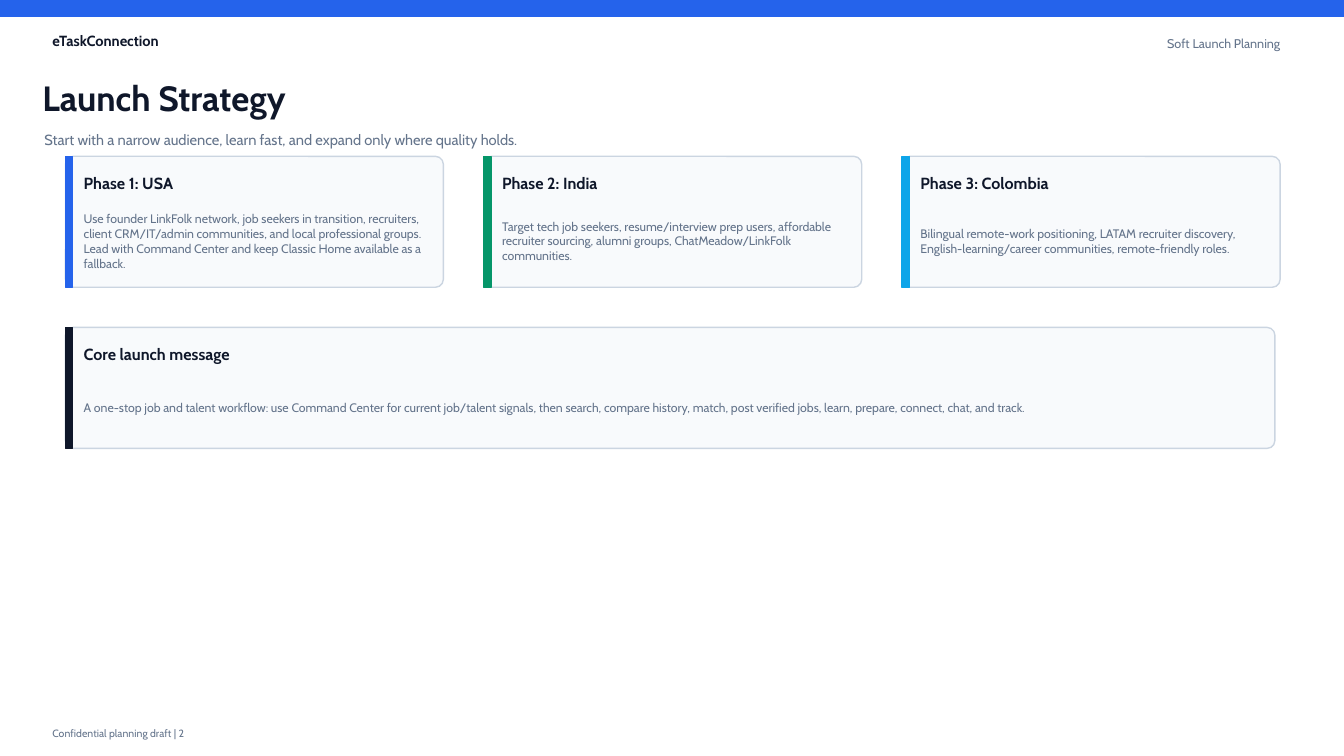
from pptx import Presentation
from pptx.dml.color import RGBColor
from pptx.enum.shapes import MSO_SHAPE
from pptx.enum.text import MSO_ANCHOR, PP_ALIGN
from pptx.util import Cm, Pt

WIDTH, HEIGHT = 33.87, 19.05
INK, GREY, BLUE = "0F172A", "64748B", "2563EB"
PALE, EDGE = "F8FAFC", "CBD5E1"
RADIUS = 0.2
PHASES = [
    ("Phase 1: USA", BLUE,
     "Use founder LinkFolk network, job seekers in transition, recruiters, "
     "client CRM/IT/admin communities, and local professional groups. "
     "Lead with Command Center and keep Classic Home available as a fallback."),
    ("Phase 2: India", "059669",
     "Target tech job seekers, resume/interview prep users, affordable "
     "recruiter sourcing, alumni groups, ChatMeadow/LinkFolk communities."),
    ("Phase 3: Colombia", "0EA5E9",
     "Bilingual remote-work positioning, LATAM recruiter discovery, "
     "English-learning/career communities, remote-friendly roles."),
]
MESSAGE = (
    "A one-stop job and talent workflow: use Command Center for current "
    "job/talent signals, then search, compare history, match, post verified "
    "jobs, learn, prepare, connect, chat, and track.")


def color(code):
    """Turn a hex string into a colour."""
    return RGBColor.from_string(code)


def add_text(slide, box, text, size=8.8, ink=GREY, bold=False,
             align=PP_ALIGN.LEFT, inset=False):
    """Place one line or paragraph of text, centred vertically in its box."""
    frame = slide.shapes.add_textbox(*map(Cm, box)).text_frame
    frame.word_wrap = True
    frame.vertical_anchor = MSO_ANCHOR.MIDDLE
    if not inset:
        frame.margin_left = frame.margin_right = 0
        frame.margin_top = frame.margin_bottom = 0
    para = frame.paragraphs[0]
    para.alignment = align
    run = para.add_run()
    run.text = text
    font = run.font
    font.name, font.size, font.bold = "Cabin", Pt(size), bold
    font.color.rgb = color(ink)


def add_block(slide, box, fill, line, kind=MSO_SHAPE.RECTANGLE):
    """Draw a filled shape with a one-point outline."""
    shape = slide.shapes.add_shape(kind, *map(Cm, box))
    shape.shadow.inherit = False
    shape.fill.solid()
    shape.fill.fore_color.rgb = color(fill)
    shape.line.color.rgb = color(line)
    shape.line.width = Pt(1)
    return shape


def add_card(slide, box, title, accent, body):
    """Draw a rounded card with an accent bar, a title and a body."""
    left, top, width, height = box
    card = add_block(slide, box, PALE, EDGE, MSO_SHAPE.ROUNDED_RECTANGLE)
    card.adjustments[0] = RADIUS / min(width, height)
    add_block(slide, (left, top, 0.18, height), accent, accent)
    inner = left + 0.46
    add_text(slide, (inner, top + 0.36, width - 0.76, 0.64), title,
             size=11.5, ink=INK, bold=True)
    add_text(slide, (inner, top + 1.22, width - 0.71, height - 1.47), body)


def add_header(slide, box):
    """Place the top band, the brand, the topic and the headings."""
    left, top, width, height = box
    add_block(slide, (left, top, width, 0.41), BLUE, BLUE)
    edge = left + 1.07
    add_text(slide, (edge, top + 0.71, 5.84, 0.64), "eTaskConnection",
             size=10.5, ink=INK, bold=True, inset=True)
    add_text(slide, (edge, top + 1.83, 22.1, 1.27), "Launch Strategy",
             size=25, ink=INK, bold=True)
    add_text(slide, (edge + 0.05, top + 3.1, 24.13, height - 3.1),
             "Start with a narrow audience, learn fast, and expand only "
             "where quality holds.", size=10.5)
    add_text(slide, (left + width - 7.58, top + 0.76, 6.22, 0.66),
             "Soft Launch Planning", size=9, align=PP_ALIGN.RIGHT, inset=True)


def add_phases(slide, box, gap=1.02):
    """Spread the phase cards evenly across the box."""
    left, top, width, height = box
    count = len(PHASES)
    wide = (width - gap * (count - 1)) / count
    for i, phase in enumerate(PHASES):
        add_card(slide, (left + i * (wide + gap), top, wide, height), *phase)


def add_footer(slide, box):
    """Place the footer line."""
    add_text(slide, box, "Confidential planning draft | 2", size=7.5,
             inset=True)


def main():
    """Build the slide and save it."""
    deck = Presentation()
    deck.slide_width, deck.slide_height = Cm(WIDTH), Cm(HEIGHT)
    slide = deck.slides.add_slide(deck.slide_layouts[6])
    add_header(slide, (0, 0, WIDTH, 3.96))
    add_phases(slide, (1.65, 3.94, 30.61, 3.3))
    add_card(slide, (1.65, 8.25, 30.48, 3.05), "Core launch message", INK,
             MESSAGE)
    add_footer(slide, (1.07, 18.23, 11.68, 0.51))
    deck.save("out.pptx")


if __name__ == "__main__":
    main()
